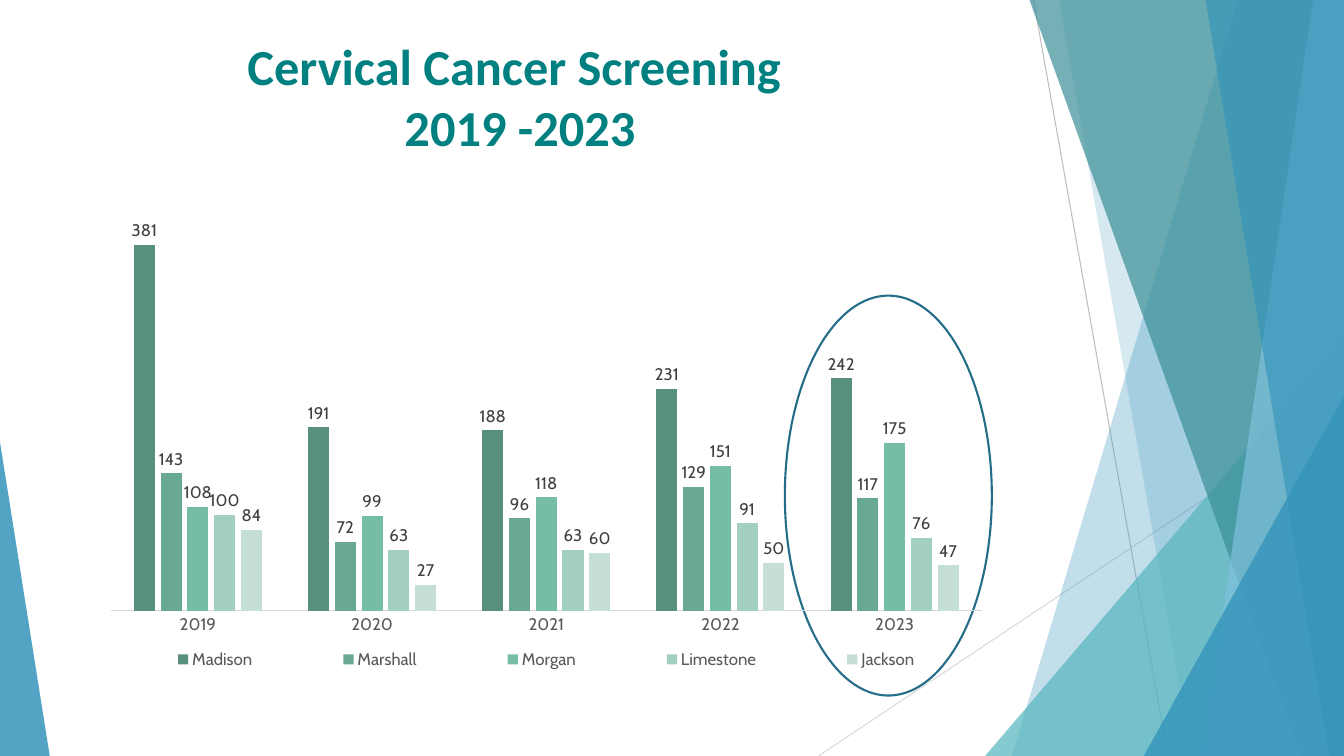
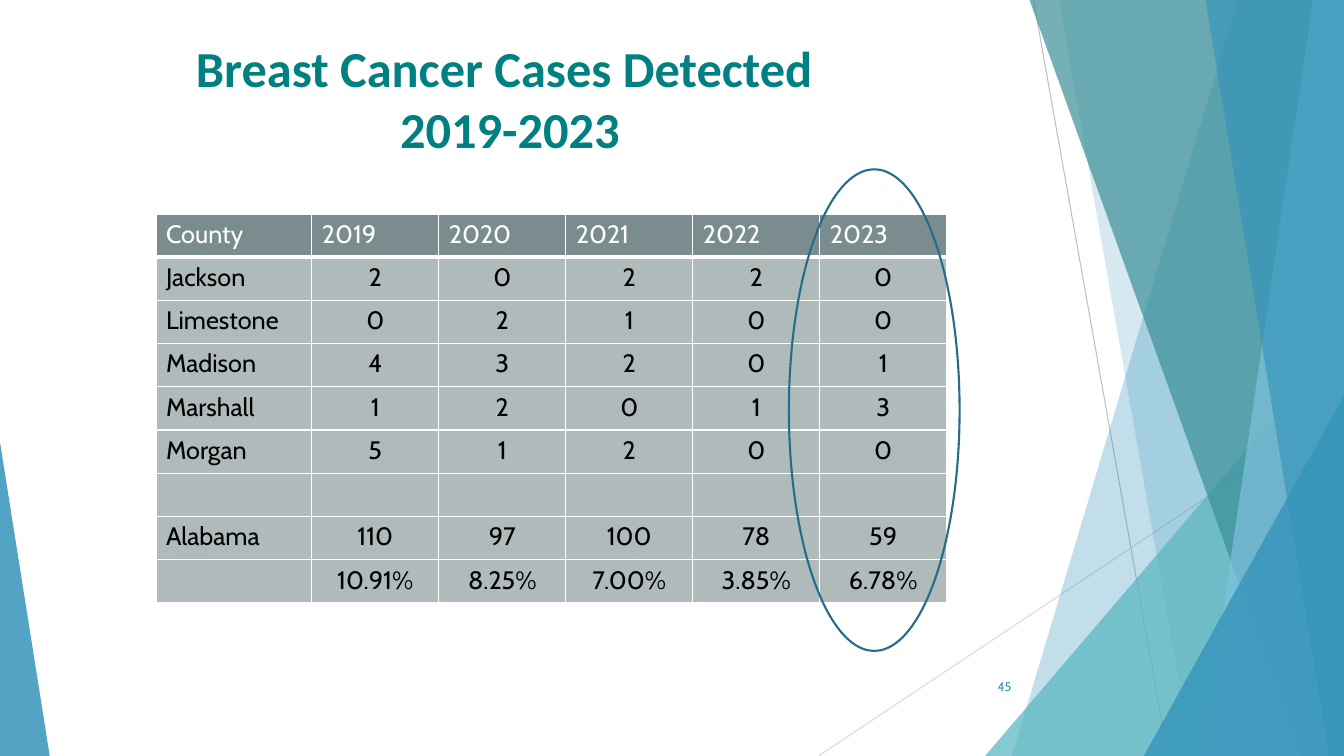
from lxml import etree
from pptx import Presentation
from pptx.chart.data import CategoryChartData
from pptx.dml.color import RGBColor
from pptx.enum.chart import XL_CHART_TYPE, XL_LABEL_POSITION, XL_LEGEND_POSITION, XL_TICK_MARK
from pptx.enum.shapes import MSO_CONNECTOR, MSO_SHAPE
from pptx.enum.text import MSO_ANCHOR, MSO_AUTO_SIZE, PP_ALIGN
from pptx.oxml import parse_xml
from pptx.oxml.ns import nsdecls, qn
from pptx.util import Inches, Pt

LEFT, CENTER, RIGHT = PP_ALIGN.LEFT, PP_ALIGN.CENTER, PP_ALIGN.RIGHT
TOP, MIDDLE = MSO_ANCHOR.TOP, MSO_ANCHOR.MIDDLE
STRAIGHT = MSO_CONNECTOR.STRAIGHT
TRIANGLE, OVAL = MSO_SHAPE.ISOSCELES_TRIANGLE, MSO_SHAPE.OVAL

COLORS = {name: RGBColor.from_string(value) for name, value in {
    "title": "008080", "ring": "266D8A", "white": "FFFFFF", "black": "000000",
    "blue": "3494BA", "aqua": "58B6C0", "teal": "3A8F98", "sky": "7FC1DB",
    "gray": "BFBFBF", "pale": "D9D9D9", "axis": "595959", "value": "404040",
    "header": "7A8C8E", "body": "AFBABB",
    "Madison": "598F7F", "Marshall": "68A894", "Morgan": "75BDA7",
    "Limestone": "A3CFC0", "Jackson": "C5DFD5",
}.items()}
BODY_FONT, TITLE_FONT = "Cabin", "Calibri"

deck = Presentation()
deck.slide_width, deck.slide_height = Inches(13.33), Inches(7.5)
COL, ROW = deck.slide_width / 100, deck.slide_height / 100


def box(left, top, width, height):
    return int(left * COL), int(top * ROW), int(width * COL), int(height * ROW)


def write(frame, *lines, size, color, font=BODY_FONT, bold=False, align=LEFT, anchor=TOP):
    frame.word_wrap = True
    frame.vertical_anchor = anchor
    paragraph = frame.paragraphs[0]
    paragraph.alignment = align
    for number, line in enumerate(lines):
        if number:
            paragraph.add_line_break()
        run = paragraph.add_run()
        run.text = line
        run.font.size = Pt(size)
        run.font.name = font
        run.font.bold = bold
        run.font.color.rgb = COLORS[color]


layout = deck.slide_layouts.get_by_name("Title Only")
slides = []
rings = []
for title_lines, title_box, ring_box in [
    (("Cervical Cancer Screening ", "2019 -2023"), (0, 4, 77.4, 18.3), (58.4, 39.1, 15.4, 52.9)),
    (("Breast Cancer Cases Detected ", "2019-2023"), (-0.2, 4.3, 76.3, 20), (58.7, 22.4, 12.7, 63.7)),
]:
    slide = deck.slides.add_slide(layout)
    title = slide.shapes.title
    title.left, title.top, title.width, title.height = box(*title_box)
    title.text_frame.auto_size = MSO_AUTO_SIZE.NONE
    write(title.text_frame, *title_lines, size=36, color="title", font=TITLE_FONT, bold=True, align=CENTER)
    ring = slide.shapes.add_shape(OVAL, *box(*ring_box))
    ring.shadow.inherit = False
    ring.fill.background()
    ring.line.color.rgb = COLORS["ring"]
    ring.line.width = Pt(1.5)
    slides.append(slide)
    rings.append(ring)

screening, detected = slides

backdrop = []
for color, start, end in [("gray", (76.9, 0), (86.9, 100)), ("pale", (100, 53.7), (60.9, 100))]:
    ray = screening.shapes.add_connector(STRAIGHT, *box(*start, *end))
    ray.line.color.rgb = COLORS[color]
    ray.line.width = Pt(0.75)
    etree.SubElement(ray.element.spPr, qn("a:effectLst"))
    backdrop.append(ray)

for color, opacity, peak_x, peak_y, base_left, base_right in [
    ("blue", 30, 92.1, 0, 75.3, 100),
    ("blue", 20, 78.8, 0, 88.7, 100),
    ("aqua", 72, 100, 44.4, 73.3, 100),
    ("teal", 70, 76.6, 0, 96.8, 100),
    ("sky", 70, 97.7, 0, 89.4, 100),
    ("blue", 65, 89.7, 0, 98.9, 100),
    ("blue", 80, 100, 52.4, 85.1, 100),
    ("blue", 85, 0, 58.5, 0, 3.7),
]:
    if peak_y:
        width = base_right - base_left
        shard = screening.shapes.add_shape(TRIANGLE, *box(base_left, peak_y, width, 100 - peak_y))
        shard.adjustments[0] = (peak_x - base_left) / width
    else:
        outline = screening.shapes.build_freeform(int(peak_x * COL), 0)
        corners = [(100, 0), (100, 100), (base_left, 100)]
        outline.add_line_segments([(int(x * COL), int(y * ROW)) for x, y in corners], close=True)
        shard = outline.convert_to_shape()
    shard.shadow.inherit = False
    shard.line.fill.background()
    shard.fill.solid()
    shard.fill.fore_color.rgb = COLORS[color]
    tint = shard.element.spPr.find(qn("a:solidFill")).find(qn("a:srgbClr"))
    etree.SubElement(tint, qn("a:alpha"), val=str(opacity * 1000))
    backdrop.append(shard)

for part in backdrop:
    layout.shapes.element.append(part.element)

years = ["2019", "2020", "2021", "2022", "2023"]
screenings = CategoryChartData(number_format="#,##0")
screenings.categories = years
for county, counts in [
    ("Madison", (381, 191, 188, 231, 242)),
    ("Marshall", (143, 72, 96, 129, 117)),
    ("Morgan", (108, 99, 118, 151, 175)),
    ("Limestone", (100, 63, 63, 91, 76)),
    ("Jackson", (84, 27, 60, 50, 47)),
]:
    screenings.add_series(county, counts)

chart = screening.shapes.add_chart(
    XL_CHART_TYPE.COLUMN_CLUSTERED, *box(6.9, 22.3, 67.5, 68), screenings).chart
chart.has_title = False
chart.font.size = Pt(10)
chart.font.name = BODY_FONT
chart.font.color.rgb = COLORS["black"]
chart.has_legend = True
chart.legend.position = XL_LEGEND_POSITION.BOTTOM
chart.legend.include_in_layout = False

year_axis, count_axis = chart.category_axis, chart.value_axis
year_axis.major_tick_mark = XL_TICK_MARK.NONE
year_axis.format.line.color.rgb = COLORS["pale"]
year_axis.format.line.width = Pt(0.75)
count_axis.visible = False
count_axis.has_major_gridlines = False
count_axis.minimum_scale, count_axis.maximum_scale = 0, 450

columns = chart.plots[0]
columns.gap_width, columns.overlap = 219, -27
columns.vary_by_categories = False
label_fonts = [(year_axis.tick_labels.font, "axis"), (chart.legend.font, "axis")]
for series in columns.series:
    series.format.fill.solid()
    series.format.fill.fore_color.rgb = COLORS[series.name]
    labels = series.data_labels
    labels.show_value = True
    labels.number_format = "#,##0"
    labels.number_format_is_linked = False
    labels.position = XL_LABEL_POSITION.OUTSIDE_END
    label_fonts.append((labels.font, "value"))
for font, color in label_fonts:
    font.size = Pt(12)
    font.name = BODY_FONT
    font.color.rgb = COLORS[color]

chart_body = chart.element.find(qn("c:chart"))
chart_body.addnext(parse_xml(f'<c:spPr {nsdecls("c", "a")}><a:noFill/><a:ln><a:noFill/></a:ln></c:spPr>'))
for region, index, target, shares in [
    ("c:plotArea", 0, '<c:layoutTarget val="inner"/>', (0.02, 0.02, 0.96, 0.84)),
    ("c:legend", 1, "", (0, 0.92, 1, 0.07)),
]:
    area = chart_body.find(qn(region))
    for automatic in area.findall(qn("c:layout")):
        area.remove(automatic)
    x, y, w, h = shares
    area.insert(index, parse_xml(
        f'<c:layout {nsdecls("c")}><c:manualLayout>{target}'
        f'<c:xMode val="edge"/><c:yMode val="edge"/>'
        f'<c:x val="{x}"/><c:y val="{y}"/><c:w val="{w}"/><c:h val="{h}"/>'
        f'</c:manualLayout></c:layout>'))

cases = [
    ["County", *years],
    ["Jackson", "2", "0", "2", "2", "0"],
    ["Limestone", "0", "2", "1", "0", "0"],
    ["Madison", "4", "3", "2", "0", "1"],
    ["Marshall", "1", "2", "0", "1", "3"],
    ["Morgan", "5", "1", "2", "0", "0"],
    [""] * 6,
    ["Alabama", "110", "97", "100", "78", "59"],
    ["", "10.91%", "8.25%", "7.00%", "3.85%", "6.78%"],
]
county_width, year_width, row_height = 11.6, 9.45, 5.72
case_frame = detected.shapes.add_table(
    len(cases), len(cases[0]),
    *box(11.6, 28.3, county_width + year_width * len(years), row_height * len(cases)))
case_table = case_frame.table
case_table.horz_banding = False
for position, column in enumerate(case_table.columns):
    column.width = int((year_width if position else county_width) * COL)
for row_number, values in enumerate(cases):
    case_table.rows[row_number].height = int(row_height * ROW)
    for position, value in enumerate(values):
        cell = case_table.cell(row_number, position)
        if value:
            write(cell.text_frame, value, size=18, color="black" if row_number else "white",
                  align=CENTER if row_number and position else LEFT)
        properties = cell._tc.get_or_add_tcPr()
        for side in "LRTB":
            points = 3 if side == "B" and row_number == 0 else 1
            properties.append(parse_xml(
                f'<a:ln{side} {nsdecls("a")} w="{Pt(points)}"><a:solidFill>'
                f'<a:srgbClr val="{COLORS["white"]}"/></a:solidFill></a:ln{side}>'))
        cell.fill.solid()
        cell.fill.fore_color.rgb = COLORS["body" if row_number else "header"]
rings[1].element.addprevious(case_frame.element)

page_number = detected.shapes.add_textbox(*box(70.4, 88.1, 5.6, 5.3))
write(page_number.text_frame, "45", size=9, color="blue", align=RIGHT, anchor=MIDDLE)

deck.save("out.pptx")
